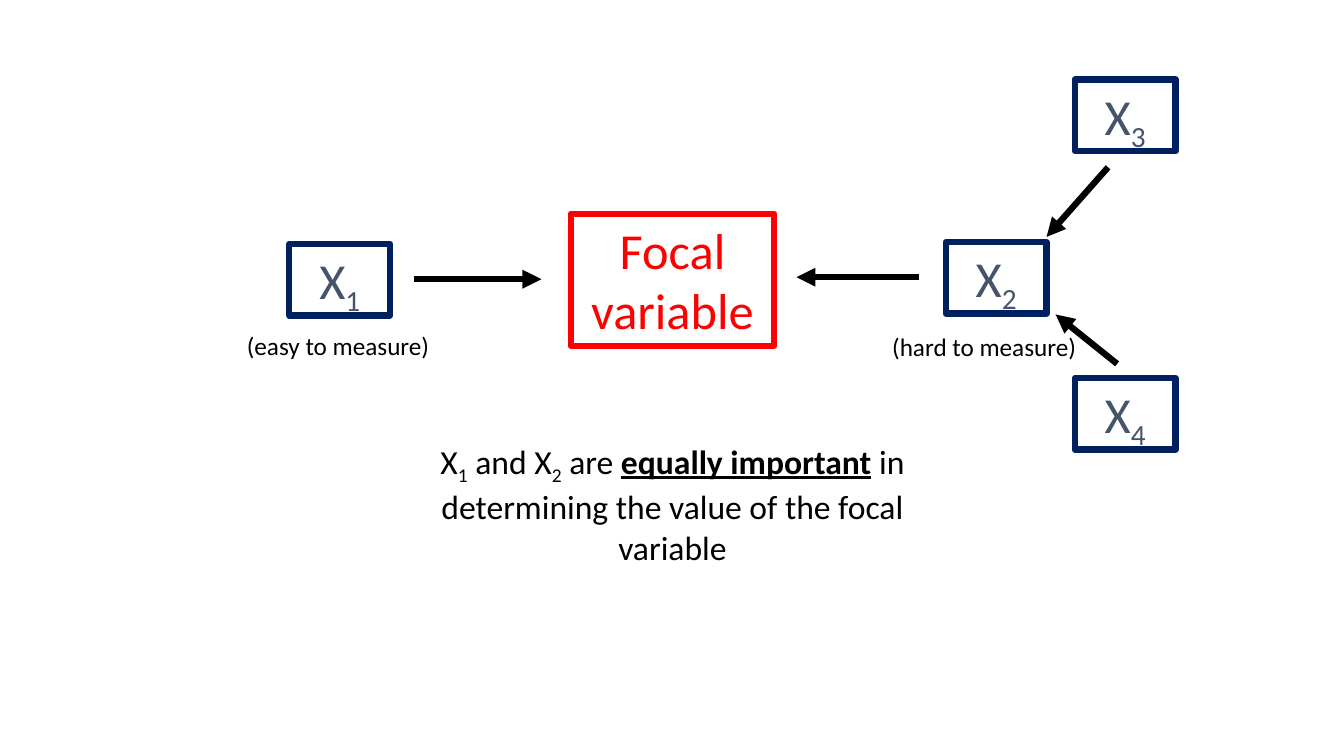
from dataclasses import dataclass

from lxml import etree
from pptx import Presentation
from pptx.dml.color import RGBColor
from pptx.enum.shapes import MSO_CONNECTOR, MSO_SHAPE
from pptx.enum.text import MSO_ANCHOR, MSO_AUTO_SIZE, PP_ALIGN
from pptx.oxml.ns import qn
from pptx.shapes.autoshape import Shape
from pptx.slide import Slide
from pptx.util import Pt

PX = 9144
FONT = "Calibri"
RED = RGBColor(0xFF, 0x00, 0x00)
NAVY = RGBColor(0x00, 0x20, 0x60)
SLATE = RGBColor(0x44, 0x54, 0x6A)
BLACK = RGBColor(0x00, 0x00, 0x00)
LINE_WIDTH = Pt(4.5)
RECTANGLE = MSO_SHAPE.RECTANGLE
STRAIGHT = MSO_CONNECTOR.STRAIGHT
TOP = MSO_ANCHOR.TOP
GROW = MSO_AUTO_SIZE.SHAPE_TO_FIT_TEXT
LEFT = PP_ALIGN.LEFT
CENTER = PP_ALIGN.CENTER


@dataclass(frozen=True)
class Span:
    text: str
    subscript: bool = False
    emphasis: bool = False


@dataclass(frozen=True)
class Frame:
    left: int
    top: int
    width: int
    height: int

    def emu(self) -> list[int]:
        return [side * PX for side in (self.left, self.top, self.width, self.height)]


@dataclass(frozen=True)
class Box:
    frame: Frame
    spans: tuple[Span, ...]
    line: RGBColor = NAVY
    color: RGBColor = SLATE


@dataclass(frozen=True)
class Label:
    frame: Frame
    spans: tuple[Span, ...]
    size: int = 18
    align: PP_ALIGN = LEFT
    wrap: bool = False


@dataclass(frozen=True)
class Arrow:
    start: tuple[int, int]
    end: tuple[int, int]


def variable(index: int) -> tuple[Span, ...]:
    return Span("X"), Span(str(index), subscript=True)


def variable_box(left: int, top: int, index: int) -> Box:
    return Box(Frame(left, top, 100, 71), variable(index))


BOXES = (
    Box(Frame(566, 212, 202, 131), (Span("Focal variable"),), RED, RED),
    variable_box(1066, 375, 4),
    variable_box(1066, 79, 3),
    variable_box(938, 240, 2),
    variable_box(287, 242, 1),
)
ARROWS = (
    Arrow((411, 277), (537, 277)),
    Arrow((912, 275), (790, 275)),
    Arrow((1099, 166), (1038, 235)),
    Arrow((1108, 361), (1047, 312)),
)
LABELS = (
    Label(Frame(235, 323, 203, 40), (Span("(easy to measure)"),)),
    Label(Frame(875, 324, 205, 40), (Span("(hard to measure)"),)),
    Label(
        Frame(390, 432, 554, 131),
        (
            *variable(1),
            Span(" and "),
            *variable(2),
            Span(" are "),
            Span("equally important", emphasis=True),
            Span(" in determining the value of the focal variable"),
        ),
        size=24,
        align=CENTER,
        wrap=True,
    ),
)


def write_text(shape: Shape, spans: tuple[Span, ...], size: int,
               color: RGBColor, align: PP_ALIGN, wrap: bool) -> None:
    frame_format = {"word_wrap": wrap, "auto_size": GROW, "vertical_anchor": TOP}
    for name, value in frame_format.items():
        setattr(shape.text_frame, name, value)
    para = shape.text_frame.paragraphs[0]
    para.alignment = align
    for span in spans:
        run = para.add_run()
        run.text = span.text
        font_format = {
            "name": FONT,
            "size": Pt(size),
            "bold": span.emphasis,
            "underline": span.emphasis,
        }
        for name, value in font_format.items():
            setattr(run.font, name, value)
        run.font.color.rgb = color
        if span.subscript:
            run._r.get_or_add_rPr().set("baseline", "-25000")


def draw_box(page: Slide, box: Box) -> None:
    shape = page.shapes.add_shape(RECTANGLE, *box.frame.emu())
    shape.shadow.inherit = False
    shape.fill.background()
    shape.line.color.rgb = box.line
    shape.line.width = LINE_WIDTH
    write_text(shape, box.spans, 36, box.color, CENTER, True)


def draw_arrow(page: Slide, arrow: Arrow) -> None:
    ends = [value * PX for value in (*arrow.start, *arrow.end)]
    connector = page.shapes.add_connector(STRAIGHT, *ends)
    connector.line.color.rgb = BLACK
    connector.line.width = LINE_WIDTH
    etree.SubElement(connector.line._get_or_add_ln(), qn("a:tailEnd"), type="triangle")
    etree.SubElement(connector._element.spPr, qn("a:effectLst"))


def draw_label(page: Slide, label: Label) -> None:
    shape = page.shapes.add_textbox(*label.frame.emu())
    write_text(shape, label.spans, label.size, BLACK, label.align, label.wrap)


def main() -> None:
    deck = Presentation()
    deck.slide_width = 1333 * PX
    deck.slide_height = 750 * PX
    page = deck.slides.add_slide(deck.slide_layouts[6])
    for box in BOXES:
        draw_box(page, box)
    for arrow in ARROWS:
        draw_arrow(page, arrow)
    for label in LABELS:
        draw_label(page, label)
    deck.save("out.pptx")


if __name__ == "__main__":
    main()
